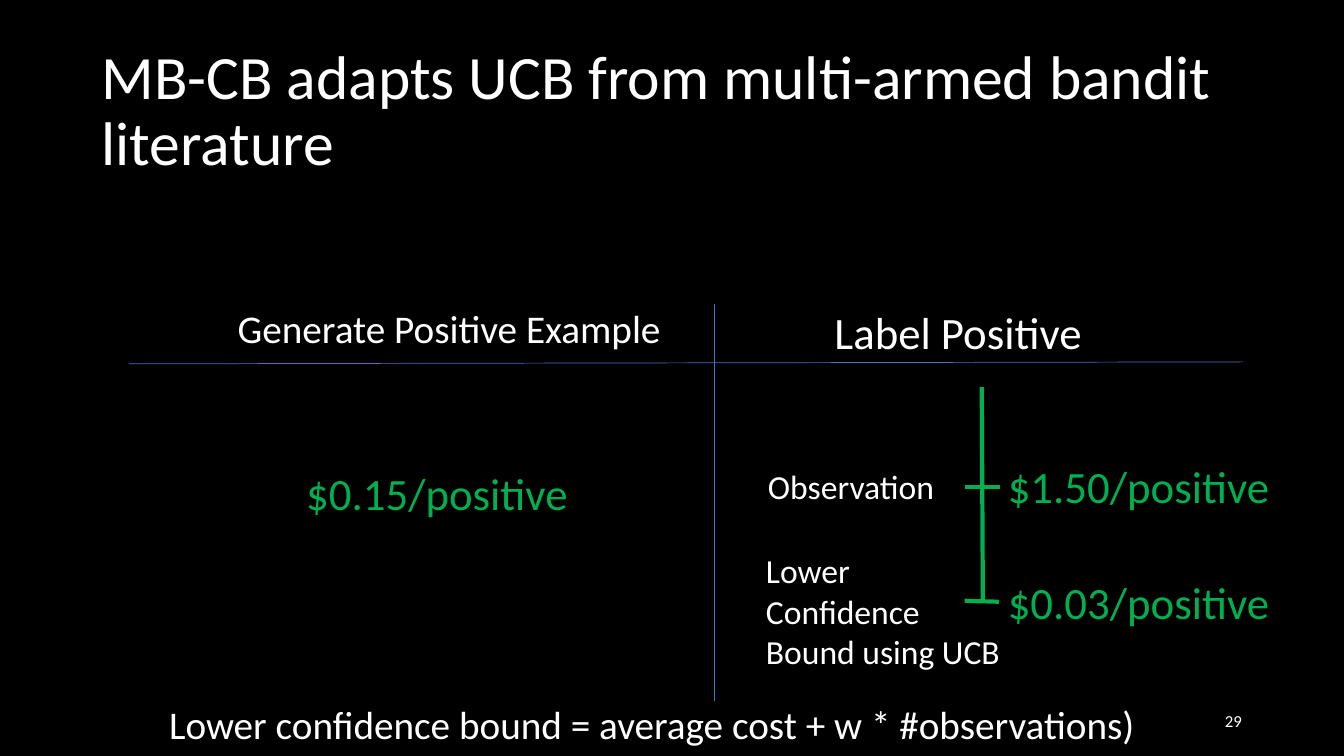
"""Build a slide comparing the costs of two ways to get positive examples."""
from dataclasses import dataclass

import pptx
import pptx.dml.color
import pptx.enum.shapes
import pptx.enum.text
import pptx.oxml.ns
import pptx.slide
import pptx.util
from lxml import etree

COLORS = {"ground": "000000", "text": "FFFFFF", "cost": "00B050", "rule": "4472C4"}
FONT = "Calibri"
WIDTH = pptx.util.Inches(13.333)
HEIGHT = pptx.util.Inches(7.5)
ALIGN = pptx.enum.text.PP_ALIGN
ANCHOR = pptx.enum.text.MSO_ANCHOR
COST_LEFT, COST_WIDTH, COST_HEIGHT = 74.25, 21.23, 8.53
TICK_LEFT = 71.78
BOUND_Y = 79.47


@dataclass(frozen=True)
class Label:
    """Text in a box given in percent of the slide's size."""
    lines: tuple[str, ...]
    left: float
    top: float
    width: float
    height: float
    size: float
    color: str = "text"
    wrap: bool = False
    anchor: ANCHOR = ANCHOR.TOP
    align: ALIGN = ALIGN.LEFT
    spacing: float = 1.0


@dataclass(frozen=True)
class Line:
    """A straight line between two points in percent of the slide's size."""
    x1: float
    y1: float
    x2: float
    y2: float
    color: str
    weight: float


def cost(text: str, left: float, top: float) -> Label:
    """Describe a green cost label."""
    return Label((text,), left, top, COST_WIDTH, COST_HEIGHT, 32, "cost")


LABELS = (
    Label(("MB-CB adapts UCB from multi-armed bandit literature",),
          6.83, 5.2, 88.5, 19.33, 44, wrap=True, anchor=ANCHOR.MIDDLE, spacing=0.9),
    Label(("29",), 70.65, 92.67, 22.5, 5.33, 12, wrap=True,
          anchor=ANCHOR.MIDDLE, align=ALIGN.RIGHT),
    Label(("Generate Positive Example",), 16.95, 39.6, 33.3, 7.6, 28),
    Label(("Label Positive",), 61.35, 39.6, 20.1, 8.53, 32),
    cost("$0.15/positive", 22.05, 60.93),
    cost("$0.03/positive", COST_LEFT, 75.33),
    Label(("Lower", "Confidence", "Bound using UCB"), 56.25, 72.13, 19.05, 17.47, 24),
    cost("$1.50/positive", COST_LEFT, 60),
    Label(("Observation",), 56.4, 60.93, 14.03, 6.67, 24),
    Label(("Lower confidence bound = average cost + w * #observations)",),
          11.85, 92, 73.58, 7.6, 28),
)

LINES = (
    Line(73.05, 51.2, 73.13, BOUND_Y, "cost", 3),
    Line(74.33, 79.6, TICK_LEFT, BOUND_Y, "cost", 3),
    Line(74.4, 64.4, TICK_LEFT, 64.4, "cost", 3),
    Line(9.6, 48.13, 92.48, 47.87, "rule", 0.5),
    Line(53.18, 40.27, 53.18, 92.67, "rule", 0.5),
)


def rgb(name: str) -> pptx.dml.color.RGBColor:
    """Look up a named colour."""
    return pptx.dml.color.RGBColor.from_string(COLORS[name])


def across(share: float) -> int:
    """Convert a percentage of the slide's width to a length."""
    return round(WIDTH * share / 100)


def down(share: float) -> int:
    """Convert a percentage of the slide's height to a length."""
    return round(HEIGHT * share / 100)


def draw_label(s: pptx.slide.Slide, label: Label) -> None:
    """Add one text box."""
    sp = s.shapes.add_textbox(across(label.left), down(label.top),
                              across(label.width), down(label.height))
    tf = sp.text_frame
    tf.word_wrap = label.wrap
    tf.vertical_anchor = label.anchor
    tf.text = "\n".join(label.lines)
    for p in tf.paragraphs:
        p.alignment = label.align
        p.line_spacing = label.spacing
        p.font.name = FONT
        p.font.size = pptx.util.Pt(label.size)
        p.font.color.rgb = rgb(label.color)


def draw_line(s: pptx.slide.Slide, line: Line) -> None:
    """Add one straight line without a shadow."""
    sp = s.shapes.add_connector(pptx.enum.shapes.MSO_CONNECTOR.STRAIGHT,
                                across(line.x1), down(line.y1),
                                across(line.x2), down(line.y2))
    sp.line.color.rgb = rgb(line.color)
    sp.line.width = pptx.util.Pt(line.weight)
    etree.SubElement(sp.element.spPr, pptx.oxml.ns.qn("a:effectLst"))


def main() -> None:
    """Build and save the presentation."""
    prs = pptx.Presentation()
    prs.slide_width, prs.slide_height = WIDTH, HEIGHT
    s = prs.slides.add_slide(prs.slide_layouts[6])
    s.background.fill.solid()
    s.background.fill.fore_color.rgb = rgb("ground")
    for line in LINES:
        draw_line(s, line)
    for label in LABELS:
        draw_label(s, label)
    prs.save("out.pptx")


if __name__ == "__main__":
    main()
